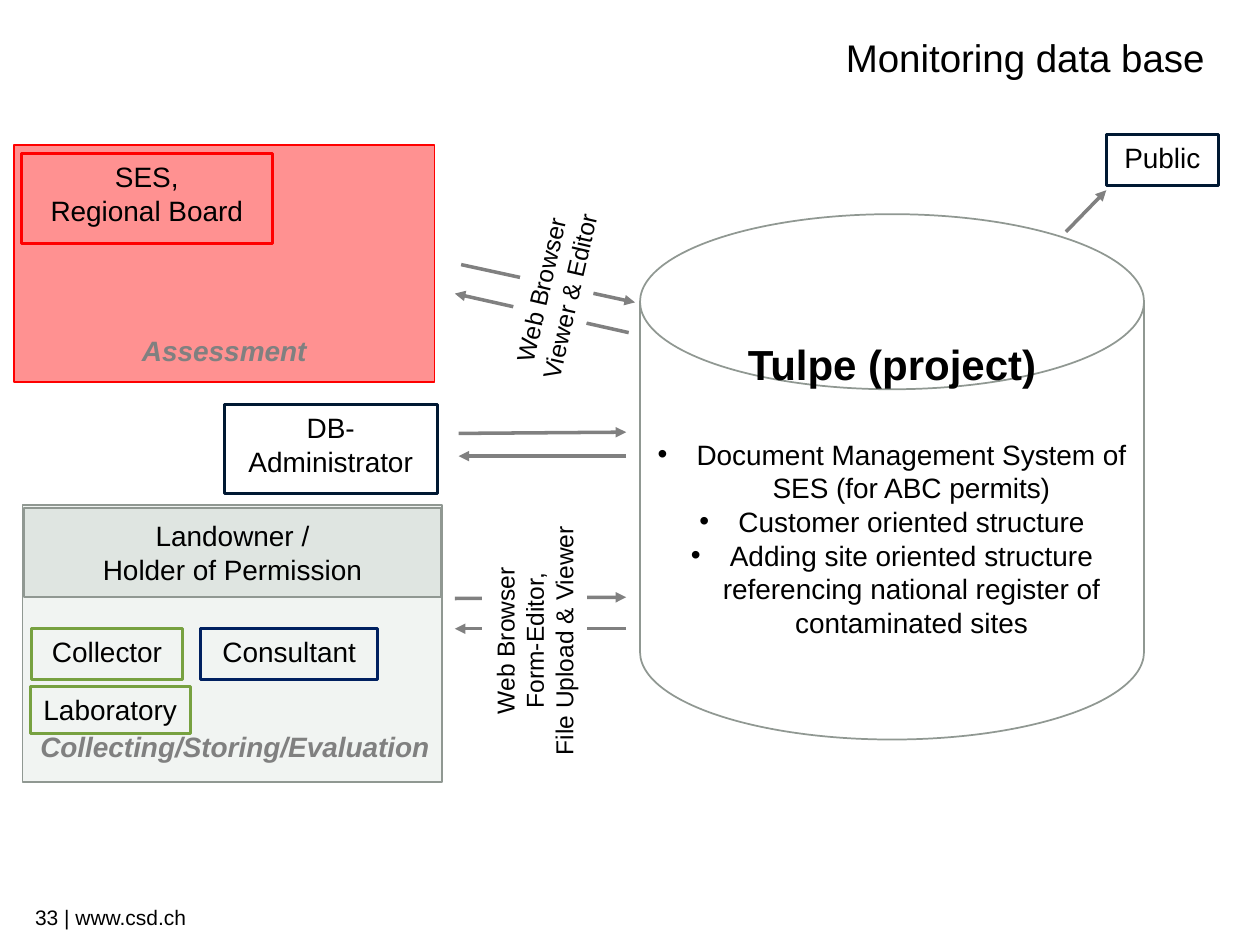
from lxml import etree
from pptx import Presentation
from pptx.dml.color import RGBColor
from pptx.enum.shapes import MSO_CONNECTOR, MSO_SHAPE
from pptx.enum.text import MSO_ANCHOR, MSO_AUTO_SIZE, PP_ALIGN
from pptx.oxml.ns import qn
from pptx.util import Inches, Pt

LEFT, CENTER, RIGHT = PP_ALIGN.LEFT, PP_ALIGN.CENTER, PP_ALIGN.RIGHT
TOP, MIDDLE, BOTTOM = MSO_ANCHOR.TOP, MSO_ANCHOR.MIDDLE, MSO_ANCHOR.BOTTOM
RECTANGLE, CYLINDER = MSO_SHAPE.RECTANGLE, MSO_SHAPE.FLOWCHART_MAGNETIC_DISK
STRAIGHT = MSO_CONNECTOR.STRAIGHT

FONT = "Arial"
BLACK, WHITE, GRAY = "000000", "FFFFFF", "808080"
RED, GREEN, NAVY, BLUE = "FF0000", "77A140", "001832", "002060"
SAGE, SAGE_EDGE = "C2CDC5", "909892"

# Headings: text, box, size, alignment
HEADINGS = [
    ("33 | www.csd.ch", (0.18, 7.14, 6.86, 0.28), 12, LEFT),
    ("Monitoring data base", (1.13, 0.18, 8.53, 0.54), 22, RIGHT),
]
# Panels: caption, box, fill, opacity %, edge, alignment, space below caption
PANELS = [
    ("Assessment", (0.11, 1.15, 3.34, 1.88), RED, 43, RED, CENTER, 0.12),
    ("Collecting/Storing/Evaluation", (0.18, 4.01, 3.33, 2.2), SAGE, 22,
     SAGE_EDGE, RIGHT, 0.15),
]
DATABASE_BOX = (5.08, 1.7, 4, 4.17)
DATABASE_TITLE = "Tulpe (project)"
DATABASE_POINTS = [
    "Document Management System of SES (for ABC permits)",
    "Customer oriented structure",
    "Adding site oriented structure referencing national register of "
    "contaminated sites",
]
# Users: lines, box, edge, wrap
USERS = [
    (["SES,", "Regional Board"], (0.17, 1.22, 1.99, 0.71), RED, True),
    (["Collector"], (0.25, 4.99, 1.2, 0.4), GREEN, False),
    (["Laboratory"], (0.24, 5.45, 1.27, 0.37), GREEN, False),
    (["Public"], (8.78, 1.07, 0.89, 0.4), NAVY, False),
    (["DB-", "Administrator"], (1.78, 3.21, 1.69, 0.71), NAVY, False),
    (["Consultant"], (1.59, 4.99, 1.41, 0.4), BLUE, False),
]
LANDOWNER = ["Landowner /", "Holder of Permission"]
LANDOWNER_BOX = (0.19, 4.03, 3.31, 0.71)
# Data flows: x and y of start, x and y of end
FLOWS = [
    (3.66, 2.1, 5.04, 2.4), (4.99, 2.64, 3.61, 2.33),
    (3.61, 4.75, 4.97, 4.74), (4.97, 4.99, 3.61, 4.99),
    (3.64, 3.44, 4.97, 3.43), (4.97, 3.62, 3.64, 3.62),
    (8.46, 1.84, 8.78, 1.51),
]
# Interfaces: lines, box, rotation
INTERFACES = [
    (["Web Browser", "Form-Editor,", "File Upload & Viewer"],
     (3.23, 4.68, 2.03, 0.81), 270),
    (["Web Browser", "Viewer & Editor"], (3.63, 2.04, 1.55, 0.57), 283),
]

prs = Presentation()
prs.slide_width, prs.slide_height = Inches(10), Inches(7.5)
slide = prs.slides.add_slide(prs.slide_layouts[6])


def rgb(color):
    return RGBColor.from_string(color)


def add_box(box, edge, width, fill=None, opacity=100, kind=RECTANGLE):
    shape = slide.shapes.add_shape(kind, *map(Inches, box))
    shape.shadow.inherit = False
    shape.line.color.rgb = rgb(edge)
    shape.line.width = Pt(width)
    if fill is None:
        shape.fill.background()
        return shape
    shape.fill.solid()
    shape.fill.fore_color.rgb = rgb(fill)
    if opacity < 100:
        color = shape.fill._xPr.find(qn("a:solidFill"))[0]
        etree.SubElement(color, qn("a:alpha"), val=str(opacity * 1000))
    return shape


def add_run(paragraph, text, size, color=BLACK, bold=False, italic=False):
    run = paragraph.add_run()
    run.text = text
    run.font.name, run.font.size = FONT, Pt(size)
    run.font.bold, run.font.italic = bold, italic
    run.font.color.rgb = rgb(color)


def write(shape, lines, size, align=CENTER, anchor=MIDDLE, wrap=True, **style):
    frame = shape.text_frame
    frame.word_wrap, frame.vertical_anchor = wrap, anchor
    for i, line in enumerate(lines):
        paragraph = frame.add_paragraph() if i else frame.paragraphs[0]
        paragraph.alignment = align
        add_run(paragraph, line, size, **style)
    return frame


def write_fitted(shape, lines, size, wrap):
    frame = write(shape, lines, size, anchor=TOP, wrap=wrap)
    frame.auto_size = MSO_AUTO_SIZE.SHAPE_TO_FIT_TEXT


def add_bullet(paragraph):
    props = paragraph._p.get_or_add_pPr()
    props.set("marL", str(Inches(0.31)))
    props.set("indent", str(-Inches(0.31)))
    etree.SubElement(props, qn("a:buFont"), typeface=FONT)
    etree.SubElement(props, qn("a:buChar"), char="•")


def add_flow(x1, y1, x2, y2):
    arrow = slide.shapes.add_connector(STRAIGHT, *map(Inches, (x1, y1, x2, y2)))
    arrow.line.color.rgb = rgb(GRAY)
    arrow.line.width = Pt(2)
    etree.SubElement(arrow.line._get_or_add_ln(), qn("a:tailEnd"), type="triangle")
    etree.SubElement(arrow._element.spPr, qn("a:effectLst"))


# Title and footer
for text, box, size, align in HEADINGS:
    write(slide.shapes.add_textbox(*map(Inches, box)), [text], size, align)

# Panels with captions near the bottom edge
for caption, box, fill, opacity, edge, align, gap in PANELS:
    panel = add_box(box, edge, 1, fill, opacity)
    frame = write(panel, [caption], 16, align, BOTTOM,
                  color=GRAY, bold=True, italic=True)
    frame.margin_bottom = Inches(gap)

# Database cylinder
database = add_box(DATABASE_BOX, SAGE_EDGE, 1, WHITE, 68, CYLINDER)
frame = write(database, [DATABASE_TITLE], 24, bold=True)
frame.margin_bottom = Inches(0.56)
frame.paragraphs[0].space_after = Pt(28)
for point in DATABASE_POINTS:
    paragraph = frame.add_paragraph()
    paragraph.alignment = CENTER
    add_bullet(paragraph)
    add_run(paragraph, point, 16)

# Users
for lines, box, edge, wrap in USERS:
    write_fitted(add_box(box, edge, 1.75), lines, 16, wrap)
write(add_box(LANDOWNER_BOX, SAGE_EDGE, 1, SAGE, 37), LANDOWNER, 16)

# Data flows, with the interface labels on top
for flow in FLOWS:
    add_flow(*flow)
for lines, box, rotation in INTERFACES:
    label = add_box(box, WHITE, 1.75, WHITE)
    label.rotation = rotation
    write_fitted(label, lines, 14, False)

prs.save("out.pptx")
